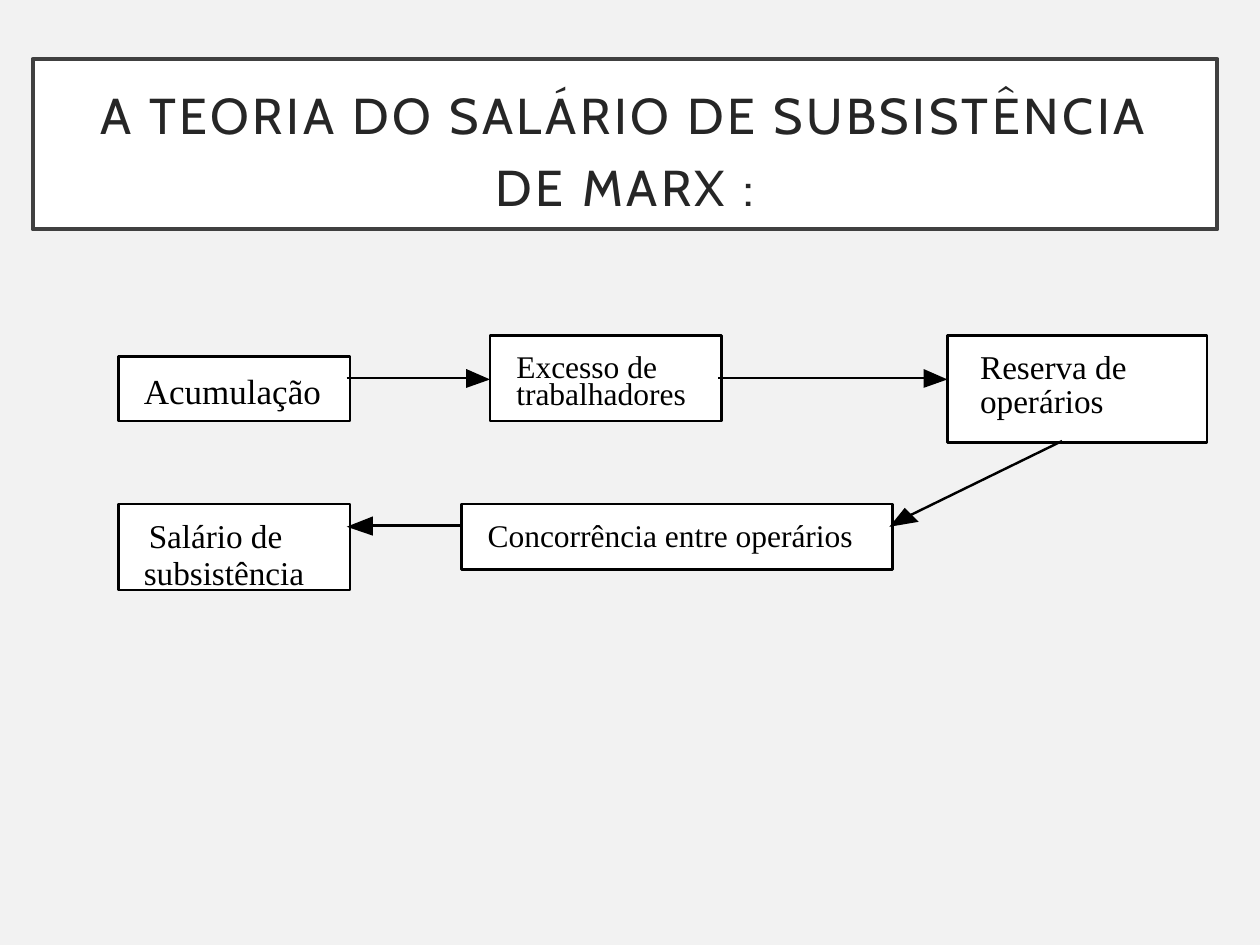
from dataclasses import dataclass

from lxml.etree import SubElement
from pptx import Presentation
from pptx.dml.color import RGBColor
from pptx.enum.shapes import MSO_CONNECTOR, MSO_SHAPE
from pptx.enum.text import MSO_ANCHOR, MSO_AUTO_SIZE, PP_ALIGN
from pptx.oxml.ns import qn
from pptx.slide import Slide
from pptx.util import Cm, Pt

BACKGROUND = RGBColor(0xF2, 0xF2, 0xF2)
WHITE = RGBColor(0xFF, 0xFF, 0xFF)
BLACK = RGBColor(0x00, 0x00, 0x00)
FRAME = RGBColor(0x40, 0x40, 0x40)
TITLE_INK = RGBColor(0x26, 0x26, 0x26)
LINE_WIDTH = Pt(1.38)

Point = tuple[float, float]


@dataclass
class Label:
    text: str
    left: float
    top: float
    width: float
    height: float


@dataclass
class Step:
    left: float
    top: float
    width: float
    height: float
    size: int
    labels: list[Label]


@dataclass
class Arrow:
    start: Point
    end: Point
    head: list[Point]


def right_head(tip_x: float) -> list[Point]:
    return [(tip_x - 0.48, 7.82), (tip_x, 7.65), (tip_x - 0.48, 7.44)]


# All lengths in centimetres
STEPS = [
    Step(2.39, 7.19, 4.67, 1.3, 20, [Label("Acumulação", 2.9, 7.44, 3.61, 0.86)]),
    Step(9.88, 6.76, 4.67, 1.73, 18, [
        Label("Excesso de", 10.41, 6.99, 3.02, 0.76),
        Label("trabalhadores", 10.41, 7.54, 3.45, 0.76),
    ]),
    Step(19.1, 6.76, 5.23, 2.16, 19, [
        Label("Reserva de", 19.76, 6.99, 4.47, 0.91),
        Label("operários", 19.76, 7.67, 3.66, 0.91),
    ]),
    Step(9.3, 10.16, 8.69, 1.32, 18, [
        Label("Concorrência entre operários", 9.83, 10.41, 7.44, 0.76),
    ]),
    Step(2.39, 10.16, 4.67, 1.73, 19, [
        Label("Salário de", 3, 10.39, 3.99, 0.91),
        Label("subsistência", 2.9, 11.13, 4.62, 0.81),
    ]),
]
ARROWS = [
    Arrow((6.99, 7.62), (9.5, 7.62), right_head(9.88)),
    Arrow((14.48, 7.62), (18.72, 7.62), right_head(19.1)),
    Arrow((21.41, 8.89), (18.24, 10.44), [(18.24, 10.24), (17.93, 10.62), (18.52, 10.52)]),
    Arrow((9.3, 10.59), (7.37, 10.59), [(7.52, 10.41), (6.99, 10.62), (7.52, 10.8)]),
]


def apply(target, values: dict) -> None:
    for name, value in values.items():
        setattr(target, name, value)


def set_margins(frame, margin: float) -> None:
    for side in ("left", "top", "right", "bottom"):
        setattr(frame, f"margin_{side}", Cm(margin))


def paint(shape, fill: RGBColor, line: RGBColor, width: int) -> None:
    shape.fill.solid()
    shape.fill.fore_color.rgb = fill
    shape.line.color.rgb = line
    shape.line.width = width


def draw_title(page: Slide, text: str) -> None:
    title = page.shapes.title
    apply(title, dict(left=Cm(0.66), top=Cm(1.19), width=Cm(23.88), height=Cm(3.43)))
    paint(title, WHITE, FRAME, Pt(2.5))
    frame = title.text_frame
    set_margins(frame, 0.51)
    apply(frame, dict(word_wrap=True, auto_size=MSO_AUTO_SIZE.NONE,
                      vertical_anchor=MSO_ANCHOR.MIDDLE))
    para = frame.paragraphs[0]
    apply(para, dict(alignment=PP_ALIGN.CENTER, line_spacing=1.2))
    span = para.add_run()
    span.text = text
    apply(span.font, dict(name="Cabin", size=Pt(28.8)))
    span.font.color.rgb = TITLE_INK
    span.font._element.set("spc", "200")


def draw_label(page: Slide, label: Label, size: int) -> None:
    box = page.shapes.add_textbox(Cm(label.left), Cm(label.top),
                                  Cm(label.width), Cm(label.height))
    frame = box.text_frame
    set_margins(frame, 0)
    apply(frame, dict(word_wrap=False, auto_size=MSO_AUTO_SIZE.SHAPE_TO_FIT_TEXT))
    span = frame.paragraphs[0].add_run()
    span.text = label.text
    apply(span.font, dict(name="Times New Roman", size=Pt(size)))
    span.font.color.rgb = BLACK


def draw_step(page: Slide, step: Step) -> None:
    box = page.shapes.add_shape(MSO_SHAPE.RECTANGLE, Cm(step.left), Cm(step.top),
                                Cm(step.width), Cm(step.height))
    box.shadow.inherit = False
    paint(box, WHITE, BLACK, LINE_WIDTH)
    for label in step.labels:
        draw_label(page, label, step.size)


def draw_arrow(page: Slide, arrow: Arrow) -> None:
    ends = [Cm(value) for value in arrow.start + arrow.end]
    line = page.shapes.add_connector(MSO_CONNECTOR.STRAIGHT, *ends)
    line.line.color.rgb = BLACK
    line.line.width = LINE_WIDTH
    SubElement(line._element.spPr, qn("a:effectLst"))

    first, *others = [(Cm(x), Cm(y)) for x, y in arrow.head]
    builder = page.shapes.build_freeform(*first)
    builder.add_line_segments(others, close=True)
    head = builder.convert_to_shape()
    head.shadow.inherit = False
    head.fill.solid()
    head.fill.fore_color.rgb = BLACK
    head.line.fill.background()


def main() -> None:
    deck = Presentation()
    apply(deck, dict(slide_width=Cm(25.4), slide_height=Cm(19.05)))
    page = deck.slides.add_slide(deck.slide_layouts[5])
    page.background.fill.solid()
    page.background.fill.fore_color.rgb = BACKGROUND

    draw_title(page, "A TEORIA DO SALÁRIO DE SUBSISTÊNCIA DE MARX :")
    for step in STEPS:
        draw_step(page, step)
    for arrow in ARROWS:
        draw_arrow(page, arrow)
    deck.save("out.pptx")


if __name__ == "__main__":
    main()
